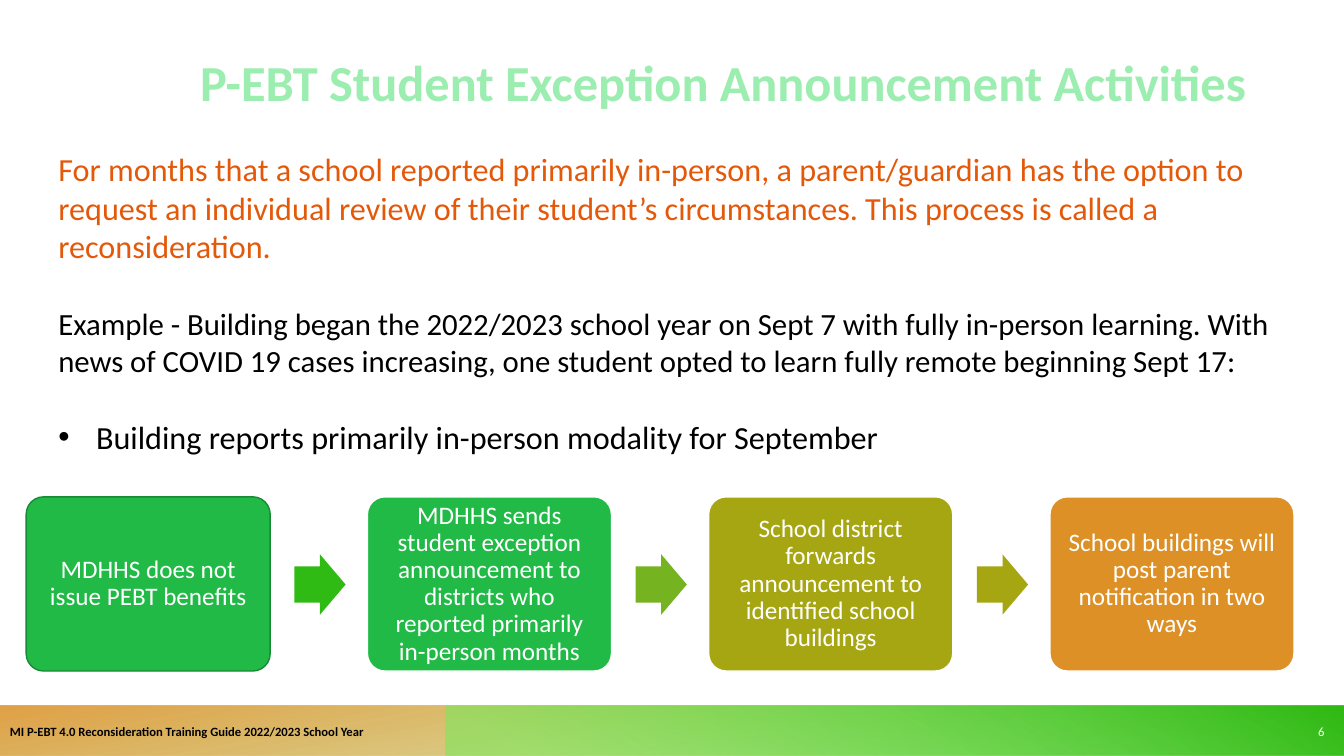
from dataclasses import dataclass
from typing import Optional

from lxml import etree
from pptx import Presentation
from pptx.dml.color import RGBColor
from pptx.enum.shapes import MSO_SHAPE
from pptx.enum.text import MSO_ANCHOR, MSO_AUTO_SIZE, PP_ALIGN
from pptx.oxml.ns import qn
from pptx.util import Cm, Pt

RECTANGLE = MSO_SHAPE.RECTANGLE
ROUNDED = MSO_SHAPE.ROUNDED_RECTANGLE
ARROW = MSO_SHAPE.RIGHT_ARROW
TOP, MIDDLE, BOTTOM = MSO_ANCHOR.TOP, MSO_ANCHOR.MIDDLE, MSO_ANCHOR.BOTTOM
LEFT, CENTER, RIGHT = PP_ALIGN.LEFT, PP_ALIGN.CENTER, PP_ALIGN.RIGHT
NO_FIT = MSO_AUTO_SIZE.NONE


@dataclass(frozen=True)
class Theme:
    font: str = "Calibri"
    title: str = "9CEDB0"
    accent: str = "E4580A"
    black: str = "000000"
    white: str = "FFFFFF"
    green: str = "21BA47"
    dark_green: str = "188A35"
    bright_green: str = "30BA14"
    light_green: str = "73ED5A"
    lime: str = "75B320"
    olive: str = "A6A612"
    orange: str = "DC9026"
    title_size: int = 36
    body_size: int = 23
    example_size: int = 22
    card_size: int = 18
    footer_size: int = 9


@dataclass(frozen=True)
class Area:
    left: float
    top: float
    width: float
    height: float

    def lengths(self) -> tuple:
        return Cm(self.left), Cm(self.top), Cm(self.width), Cm(self.height)


@dataclass(frozen=True)
class Stop:
    position: float
    color: str
    opacity: int


@dataclass(frozen=True)
class Bar:
    area: Area
    rotation: int
    angle: int
    stops: tuple


@dataclass(frozen=True)
class BodyText:
    text: str
    size: int
    color: str
    before: int = 0
    bullet: bool = False


@dataclass(frozen=True)
class Step:
    text: str
    fill: str
    line: str
    arrow: Optional[str] = None


THEME = Theme()
STEP_PITCH = 8.6
CARD = Area(0.66, 12.52, 6.15, 4.39)
STEP_ARROW = Area(7.42, 13.97, 1.29, 1.52)

BARS = (
    Bar(Area(0, 17.78, 33.87, 1.27), 180, 100,
        (Stop(0.14, THEME.olive, 28), Stop(1, THEME.orange, 85))),
    Bar(Area(11.22, 17.78, 22.65, 1.27), 0, 240,
        (Stop(0.09, THEME.light_green, 55), Stop(0.99, THEME.bright_green, 100))),
)
BODY = (
    BodyText("For months that a school reported primarily in-person, a parent/guardian has "
             "the option to request an individual review of their student’s circumstances. "
             "This process is called a reconsideration.", THEME.body_size, THEME.accent),
    BodyText("Example - Building began the 2022/2023 school year on Sept 7 with fully "
             "in-person learning. With news of COVID 19 cases increasing, one student opted "
             "to learn fully remote beginning Sept 17:", THEME.example_size, THEME.black, 28),
    BodyText("Building reports primarily in-person modality for September",
             THEME.body_size, THEME.black, 28, True),
)
STEPS = (
    Step("MDHHS does not issue PEBT benefits",
         THEME.green, THEME.dark_green, THEME.bright_green),
    Step("MDHHS sends student exception announcement to districts who reported primarily "
         "in-person months", THEME.green, THEME.white, THEME.lime),
    Step("School district forwards announcement to identified school buildings",
         THEME.olive, THEME.white, THEME.olive),
    Step("School buildings will post parent notification in two ways",
         THEME.orange, THEME.white),
)


def place(shape, area: Area) -> None:
    shape.left, shape.top, shape.width, shape.height = area.lengths()


def set_frame(frame, anchor, side: float = 0.25, top: float = 0.13, bottom: float = 0.13) -> None:
    frame.word_wrap = True
    frame.auto_size = NO_FIT
    frame.vertical_anchor = anchor
    frame.margin_left = frame.margin_right = Cm(side)
    frame.margin_top, frame.margin_bottom = Cm(top), Cm(bottom)


def write(para, text: str, size: int, color: str, align=LEFT, bold: bool = False,
          spacing: float = 1.0, before: int = 0) -> None:
    para.text = text
    para.alignment = align
    para.line_spacing = spacing
    para.space_before, para.space_after = Pt(before), Pt(0)
    font = para.font
    font.name, font.size, font.bold = THEME.font, Pt(size), bold
    font.color.rgb = RGBColor.from_string(color)


def set_bullet(para, shown: bool) -> None:
    properties = para._p.get_or_add_pPr()
    indent = Cm(0.95) if shown else 0
    properties.set("marL", str(indent))
    properties.set("indent", str(-indent))
    if shown:
        etree.SubElement(properties, qn("a:buFont"), typeface="Arial")
        etree.SubElement(properties, qn("a:buChar"), char="•")
    else:
        etree.SubElement(properties, qn("a:buNone"))


def add_filled(page, kind, area: Area, fill: str, line: Optional[str] = None):
    shape = page.shapes.add_shape(kind, *area.lengths())
    shape.shadow.inherit = False
    shape.fill.solid()
    shape.fill.fore_color.rgb = RGBColor.from_string(fill)
    if line:
        shape.line.color.rgb = RGBColor.from_string(line)
        shape.line.width = Pt(1)
    else:
        shape.line.fill.background()
    return shape


def add_bar(page, bar: Bar) -> None:
    shape = add_filled(page, RECTANGLE, bar.area, bar.stops[0].color)
    shape.rotation = bar.rotation
    shape._element.spPr.find(qn("a:xfrm")).set("flipH", "1")
    shape.fill.gradient()
    shape.fill.gradient_angle = 360 - bar.angle
    for target, stop in zip(shape.fill.gradient_stops, bar.stops):
        target.position = stop.position
        target.color.rgb = RGBColor.from_string(stop.color)
    for color, stop in zip(shape._element.spPr.iter(qn("a:srgbClr")), bar.stops):
        etree.SubElement(color, qn("a:alpha"), val=str(stop.opacity * 1000))


def add_step(page, index: int, step: Step) -> None:
    shift = index * STEP_PITCH
    area = Area(CARD.left + shift, CARD.top, CARD.width, CARD.height)
    card = add_filled(page, ROUNDED, area, step.fill, step.line)
    card.adjustments[0] = 0.1
    set_frame(card.text_frame, MIDDLE, 0.18, 0, 0)
    write(card.text_frame.paragraphs[0], step.text, THEME.card_size, THEME.white, CENTER,
          spacing=0.9)
    if step.arrow:
        area = Area(STEP_ARROW.left + shift, STEP_ARROW.top, STEP_ARROW.width, STEP_ARROW.height)
        arrow = add_filled(page, ARROW, area, step.arrow)
        arrow.adjustments[0], arrow.adjustments[1] = 0.6, 0.5


def add_footer(page, area: Area, text: str, color: str, align, bold: bool) -> None:
    box = page.shapes.add_textbox(*area.lengths())
    set_frame(box.text_frame, MIDDLE)
    write(box.text_frame.paragraphs[0], text, THEME.footer_size, color, align, bold)


def main() -> None:
    deck = Presentation()
    deck.slide_width, deck.slide_height = Cm(33.87), Cm(19.05)
    page = deck.slides.add_slide(deck.slide_layouts[1])
    title, body = page.placeholders
    place(title, Area(4.78, 0.51, 26.9, 3.43))
    set_frame(title.text_frame, BOTTOM, 0, 0, 1.12)
    write(title.text_frame.paragraphs[0], "P-EBT Student Exception Announcement Activities",
          THEME.title_size, THEME.title, CENTER, True)
    place(body, Area(1.22, 3.63, 32.33, 9.58))
    set_frame(body.text_frame, TOP)
    for index, item in enumerate(BODY):
        para = body.text_frame.add_paragraph() if index else body.text_frame.paragraphs[0]
        set_bullet(para, item.bullet)
        write(para, item.text, item.size, item.color, before=item.before)
    for bar in BARS:
        add_bar(page, bar)
    add_footer(page, Area(32.41, 17.8, 1.22, 1.25), "6", THEME.white, RIGHT, False)
    add_footer(page, Area(0, 17.8, 11.43, 1.27),
               "MI P-EBT 4.0 Reconsideration Training Guide 2022/2023 School Year",
               THEME.black, LEFT, True)
    for index, step in enumerate(STEPS):
        add_step(page, index, step)
    deck.save("out.pptx")


if __name__ == "__main__":
    main()
